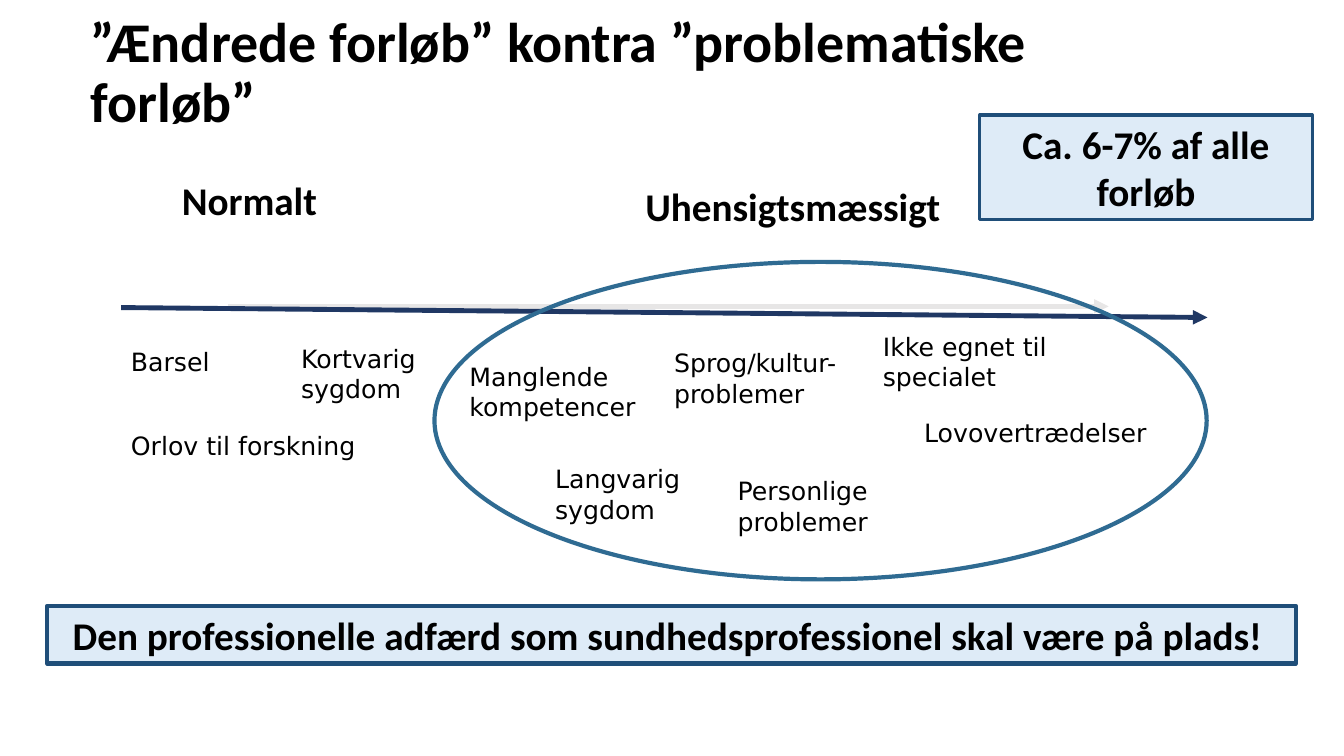
from lxml import etree
from pptx import Presentation
from pptx import util as u
from pptx.dml.color import RGBColor
from pptx.enum import shapes, text
from pptx.oxml.ns import qn

COLOURS = {
    "text": "000000",
    "pale_arrow": "E7E6E6",
    "arrow": "203864",
    "ellipse": "2F6B92",
    "box_fill": "DEEBF7",
    "box_line": "1F4E79",
}
LABELS = [
    ("Barsel", 3.05, 8.59, 3.99, 1.02),
    ("Lovovertrædelser", 23.04, 10.39, 6.6, 1.02),
    ("Kortvarig sygdom", 7.34, 8.53, 3.81, 1.78),
    ("Manglende kompetencer", 11.58, 8.97, 5, 1.78),
    ("Orlov til forskning", 3.05, 10.72, 6.4, 1.02),
    ("Personlige problemer", 18.34, 11.86, 3.99, 1.78),
    ("Ikke egnet til specialet", 22, 8.23, 4.8, 1.78),
    ("Langvarig sygdom", 13.74, 11.56, 4.39, 1.78),
    ("Sprog/kultur- problemer", 16.74, 8.64, 4.8, 1.78),
]


def colour(name):
    """Return the named colour."""
    return RGBColor.from_string(COLOURS[name])


class SlideBuilder:
    """Hold the style and the current slide."""

    heading_font = "Calibri"
    label_font = "DejaVu Sans"

    def __init__(self, presentation):
        """Add a title-only slide."""
        self.slide = presentation.slides.add_slide(presentation.slide_layouts[5])

    def set_text(self, shape, words, font, size, bold=False, align=text.PP_ALIGN.LEFT):
        """Set and format the wording of a shape."""
        frame = shape.text_frame
        frame.word_wrap = True
        frame.text = words
        paragraph = frame.paragraphs[0]
        paragraph.alignment = align
        for run in paragraph.runs:
            run.font.name = font
            run.font.size = u.Pt(size)
            run.font.bold = bold
            run.font.color.rgb = colour("text")

    def title(self, words, left, top, width, height):
        """Place and format the title."""
        title = self.slide.shapes.title
        title.left, title.top = u.Cm(left), u.Cm(top)
        title.width, title.height = u.Cm(width), u.Cm(height)
        self.set_text(title, words, self.heading_font, 40, True)
        title.text_frame.auto_size = text.MSO_AUTO_SIZE.NONE
        title.text_frame.vertical_anchor = text.MSO_ANCHOR.MIDDLE
        title.text_frame.paragraphs[0].line_spacing = 0.9

    def textbox(self, left, top, width, height):
        """Add an empty text box."""
        return self.slide.shapes.add_textbox(*map(u.Cm, (left, top, width, height)))

    def label(self, words, *place):
        """Add a plain label."""
        self.set_text(self.textbox(*place), words, self.label_font, 18)

    def heading(self, words, *place):
        """Add a bold centred heading."""
        self.set_text(self.textbox(*place), words, self.heading_font, 28, True, text.PP_ALIGN.CENTER)

    def outline(self, kind, line, weight, *place):
        """Add an unfilled shape with an outline."""
        shape = self.slide.shapes.add_shape(kind, *map(u.Cm, place))
        shape.shadow.inherit = False
        shape.fill.background()
        shape.line.color.rgb = colour(line)
        shape.line.width = u.Pt(weight)
        return shape

    def box(self, words, weight, *place):
        """Add a filled box with bold centred text."""
        shape = self.outline(shapes.MSO_SHAPE.RECTANGLE, "box_line", weight, *place)
        shape.fill.solid()
        shape.fill.fore_color.rgb = colour("box_fill")
        self.set_text(shape, words, self.heading_font, 28, True, text.PP_ALIGN.CENTER)
        shape.text_frame.vertical_anchor = text.MSO_ANCHOR.TOP

    def arrow(self, line, *ends):
        """Add a straight arrow."""
        connector = self.slide.shapes.add_connector(shapes.MSO_CONNECTOR.STRAIGHT, *map(u.Cm, ends))
        connector.line.color.rgb = colour(line)
        connector.line.width = u.Pt(3.5)
        properties = connector._element.spPr
        etree.SubElement(properties.find(qn("a:ln")), qn("a:tailEnd"), type="triangle")
        etree.SubElement(properties, qn("a:effectLst"))


def main():
    """Build and save the presentation."""
    presentation = Presentation()
    presentation.slide_width, presentation.slide_height = u.Cm(33.87), u.Cm(19.05)
    builder = SlideBuilder(presentation)
    builder.title("”Ændrede forløb” kontra ”problematiske forløb”", 2.03, 0.28, 27.61, 3.18)
    builder.arrow("pale_arrow", 5.74, 7.72, 27.94, 7.72)
    for label in LABELS:
        builder.label(*label)
    builder.arrow("arrow", 3.05, 7.75, 30.43, 8)
    builder.outline(shapes.MSO_SHAPE.OVAL, "ellipse", 3, 10.95, 6.6, 19.46, 8)
    builder.heading("Normalt", 2.92, 4.32, 6.73, 1.45)
    builder.heading("Uhensigtsmæssigt", 15.27, 4.47, 9.42, 1.45)
    builder.box("Den professionelle adfærd som sundhedsprofessionel skal være på plads! ",
                3, 1.19, 15.27, 31.47, 1.45)
    builder.box("Ca. 6-7% af alle forløb", 2.25, 24.69, 2.9, 8.38, 2.64)
    presentation.save("out.pptx")


if __name__ == "__main__":
    main()
